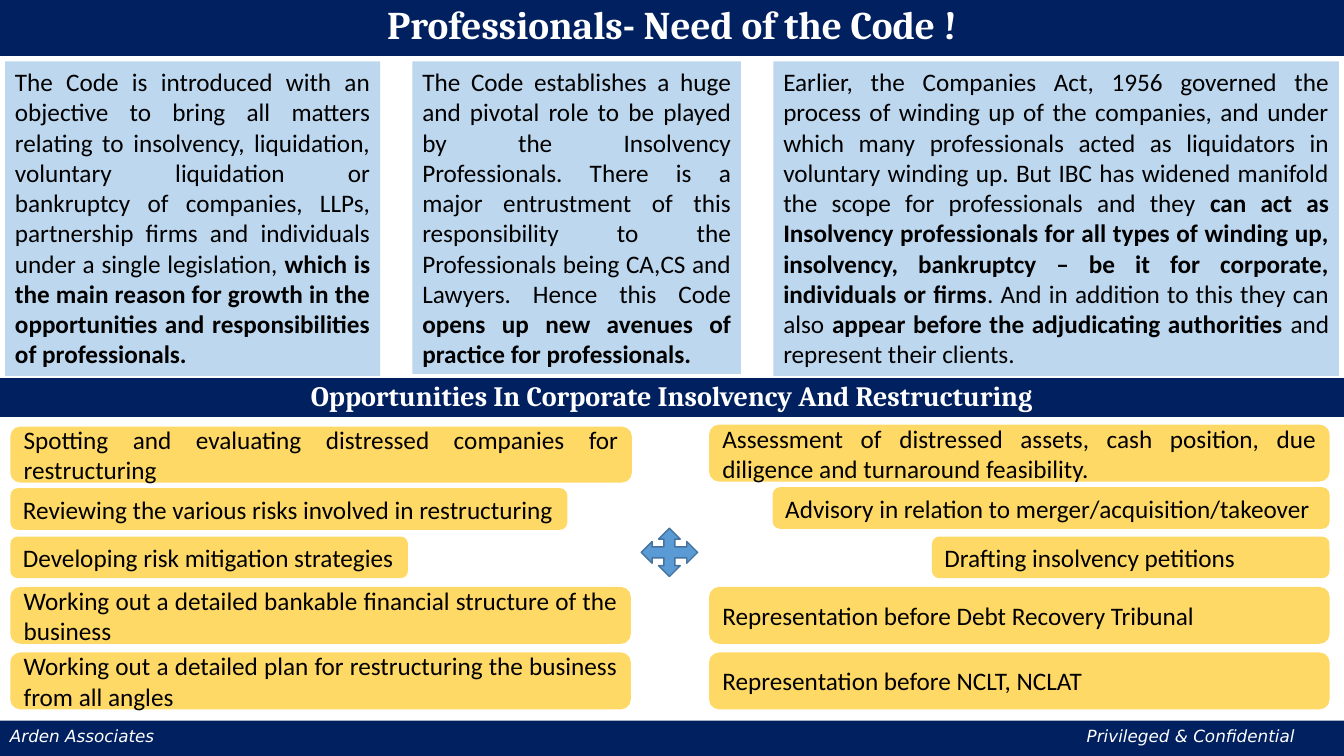
"""Build the slide on professionals and the need of the Code."""
from dataclasses import dataclass

from lxml import etree
from pptx import Presentation
from pptx.dml.color import RGBColor
from pptx.enum.shapes import MSO_SHAPE as Shp
from pptx.enum.text import MSO_ANCHOR as Anchor, MSO_AUTO_SIZE as AutoSize, PP_ALIGN as Align
from pptx.oxml.ns import qn
from pptx.util import Inches, Pt

COLORS = {
    "navy": "002060",
    "white": "FFFFFF",
    "black": "000000",
    "panel": "BDD7EE",
    "pill": "FFD966",
    "arrow": "5B9BD5",
    "arrow_line": "43739E",
}
SLIDE_W, SLIDE_H = 13.33, 7.5
PANEL_TOP = 0.61
PILL_LEFT, PILL_RIGHT = 0.11, 13.18


@dataclass
class Banner:
    text: str
    top: float
    height: float
    size: int


@dataclass
class Panel:
    left: float
    width: float
    height: float
    runs: list[tuple[str, bool]]


@dataclass
class Pill:
    text: str
    top: float
    width: float
    height: float


BANNERS = [
    Banner("Professionals- Need of the Code !", -0.03, 0.59, 28),
    Banner("Opportunities In Corporate Insolvency And Restructuring", 3.74, 0.4, 20),
]
PANELS = [
    Panel(0.05, 3.72, 3.13, [
        ("The Code is introduced with an objective to bring all matters relating to "
         "insolvency, liquidation, voluntary liquidation or bankruptcy of companies, LLPs, "
         "partnership firms and individuals under a single legislation, ", False),
        ("which is the main reason for growth in the opportunities and responsibilities "
         "of professionals.", True),
    ]),
    Panel(4.09, 3.26, 3.1, [
        ("The Code establishes a huge and pivotal role to be played by the Insolvency "
         "Professionals. There is a major entrustment of this responsibility to the "
         "Professionals being CA,CS and Lawyers. Hence this Code ", False),
        ("opens up new avenues of practice for professionals.", True),
    ]),
    Panel(7.67, 5.61, 3.13, [
        ("Earlier, the Companies Act, 1956 governed the process of winding up of the "
         "companies, and under which many professionals acted as liquidators in voluntary "
         "winding up. But IBC has widened manifold the scope for professionals and they ", False),
        ("can act as Insolvency professionals for all types of winding up, insolvency, "
         "bankruptcy – be it for corporate, individuals or firms", True),
        (". And in addition to this they can also ", False),
        ("appear before the adjudicating authorities ", True),
        ("and represent their clients.", False),
    ]),
]
LEFT_PILLS = [
    Pill("Spotting and evaluating distressed companies for restructuring", 4.24, 6.15, 0.54),
    Pill("Reviewing the various risks involved in restructuring", 4.85, 5.51, 0.4),
    Pill("Developing risk mitigation strategies", 5.33, 3.93, 0.4),
    Pill("Working out a detailed bankable financial structure of the business", 5.83, 6.14, 0.55),
    Pill("Working out a detailed plan for restructuring the business from all angles",
         6.48, 6.14, 0.55),
]
RIGHT_PILLS = [
    Pill("Assessment of distressed assets, cash position, due diligence and turnaround "
         "feasibility.", 4.22, 6.14, 0.55),
    Pill("Advisory in relation to merger/acquisition/takeover", 4.84, 5.51, 0.4),
    Pill("Drafting insolvency petitions", 5.33, 3.93, 0.4),
    Pill("Representation before Debt Recovery Tribunal", 5.83, 6.14, 0.55),
    Pill("Representation before NCLT, NCLAT", 6.48, 6.14, 0.55),
]


def rgb(name: str) -> RGBColor:
    return RGBColor.from_string(COLORS[name])


def add_box(s, kind: Shp, left: float, top: float, width: float, height: float,
            fill: str, line: str | None = None):
    sp = s.shapes.add_shape(kind, Inches(left), Inches(top), Inches(width), Inches(height))
    sp.shadow.inherit = False
    sp.fill.solid()
    sp.fill.fore_color.rgb = rgb(fill)
    if line:
        sp.line.color.rgb = rgb(line)
        sp.line.width = Pt(1)
    else:
        sp.line.fill.background()
    sp.text_frame.word_wrap = True
    return sp


def style_run(r, font: str, size: int, color: str, bold: bool = False,
              italic: bool = False) -> None:
    r.font.name = font
    r.font.size = Pt(size)
    r.font.color.rgb = rgb(color)
    r.font.bold = bold
    r.font.italic = italic


def add_banner(s, banner: Banner) -> None:
    sp = add_box(s, Shp.RECTANGLE, -0.01, banner.top, 13.35, banner.height, "navy", "white")
    p = sp.text_frame.paragraphs[0]
    p.text = banner.text
    p.alignment = Align.CENTER
    p.line_spacing = 0.9
    style_run(p.runs[0], "Cambria", banner.size, "white", bold=True)


def add_footer(s, left_text: str, right_text: str) -> None:
    sp = add_box(s, Shp.RECTANGLE, 0, 7.15, SLIDE_W, 0.35, "navy")
    tf = sp.text_frame
    tf.vertical_anchor = Anchor.TOP
    p = tf.paragraphs[0]
    p.text = f"{left_text}\t{right_text}"
    p.alignment = Align.LEFT
    tabs = etree.SubElement(p._p.get_or_add_pPr(), qn("a:tabLst"))
    etree.SubElement(tabs, qn("a:tab"), pos=str(Inches(10.68)), algn="l")
    style_run(p.runs[0], "DejaVu Sans", 12, "white", italic=True)


def add_panel(s, panel: Panel) -> None:
    sp = add_box(s, Shp.RECTANGLE, panel.left, PANEL_TOP, panel.width, panel.height, "panel")
    tf = sp.text_frame
    tf.vertical_anchor = Anchor.TOP
    tf.auto_size = AutoSize.SHAPE_TO_FIT_TEXT
    p = tf.paragraphs[0]
    p.alignment = Align.JUSTIFY
    for text, bold in panel.runs:
        r = p.add_run()
        r.text = text
        style_run(r, "Calibri", 18, "black", bold=bold)


def add_pill(s, pill: Pill, left: float) -> None:
    sp = add_box(s, Shp.ROUNDED_RECTANGLE, left, pill.top, pill.width, pill.height,
                 "pill", "pill")
    p = sp.text_frame.paragraphs[0]
    p.text = pill.text
    p.alignment = Align.JUSTIFY
    style_run(p.runs[0], "Calibri", 18, "black")


def main() -> None:
    prs = Presentation()
    prs.slide_width, prs.slide_height = Inches(SLIDE_W), Inches(SLIDE_H)
    s = prs.slides.add_slide(prs.slide_layouts[6])
    add_footer(s, "Arden Associates", "Privileged & Confidential")
    for panel in PANELS:
        add_panel(s, panel)
    for banner in BANNERS:
        add_banner(s, banner)
    for pill in LEFT_PILLS:
        add_pill(s, pill, PILL_LEFT)
    for pill in RIGHT_PILLS:
        add_pill(s, pill, PILL_RIGHT - pill.width)
    add_box(s, Shp.QUAD_ARROW, 6.36, 5.24, 0.56, 0.48, "arrow", "arrow_line")
    prs.save("out.pptx")


if __name__ == "__main__":
    main()
